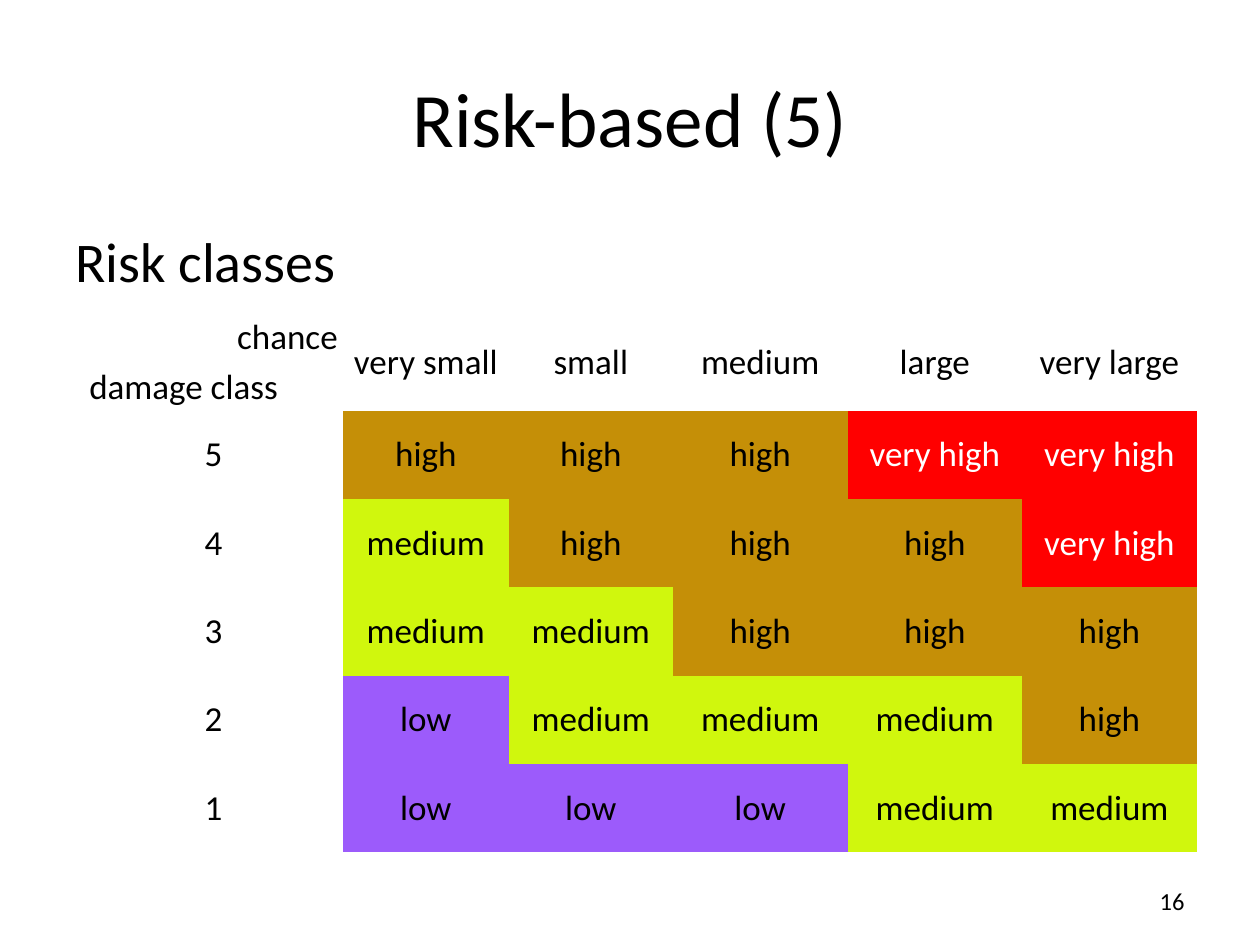
from pptx import Presentation
from pptx.dml.color import RGBColor
from pptx.enum.text import MSO_ANCHOR, PP_ALIGN
from pptx.util import Cm, Pt

LEFT, CENTER, RIGHT = PP_ALIGN.LEFT, PP_ALIGN.CENTER, PP_ALIGN.RIGHT
TOP, MIDDLE = MSO_ANCHOR.TOP, MSO_ANCHOR.MIDDLE
FONT = "Calibri"
BLACK, WHITE = "000000", "FFFFFF"
PLAIN_TABLE_STYLE = "{2D5ABB26-0587-4C30-8999-92F81FD0307C}"

# Content: text, place (left, top, width, height in cm), size, alignment, anchor
TEXTS = [
    ("Risk-based (5)", (1.27, 0.76, 22.86, 3.18), 44, CENTER, MIDDLE),
    ("Risk classes", (1.27, 4.45, 22.83, 1.68), 32, LEFT, TOP),
    ("16", (18.21, 17.65, 5.92, 1.02), 14, RIGHT, MIDDLE),
]
CORNER = [("chance", RIGHT), ("damage class", LEFT)]
CHANCES = ["very small", "small", "medium", "large", "very large"]
RISKS = {
    "5": ["high", "high", "high", "very high", "very high"],
    "4": ["medium", "high", "high", "high", "very high"],
    "3": ["medium", "medium", "high", "high", "high"],
    "2": ["low", "medium", "medium", "medium", "high"],
    "1": ["low", "low", "low", "medium", "medium"],
}
RISK_COLORS = {  # fill, text
    "low": ("9C5BFB", BLACK),
    "medium": ("D0F70D", BLACK),
    "high": ("C58F07", BLACK),
    "very high": ("FF0000", WHITE),
}
TABLE_LEFT, TABLE_TOP = 1.7, 6.32
COLUMN_WIDTHS = [5.21, 3.35, 3.3, 3.53, 3.51, 3.53]
HEADER_HEIGHT, ROW_HEIGHT = 1.96, 1.78


def rgb(color):
    return RGBColor.from_string(color)


def write(frame, lines, size, color=BLACK):
    """Fill a text frame with (text, alignment) lines."""
    for index, (text, alignment) in enumerate(lines):
        para = frame.add_paragraph() if index else frame.paragraphs[0]
        para.alignment = alignment
        para.space_before = Pt(0.2 * size if index else 0)
        span = para.add_run()
        span.text = text
        span.font.name = FONT
        span.font.size = Pt(size)
        span.font.color.rgb = rgb(color)


def fill_cell(cell, lines, fill=None, color=BLACK):
    cell.vertical_anchor = MIDDLE
    cell.margin_left = cell.margin_right = Cm(0.1)
    cell.margin_top = cell.margin_bottom = Cm(0.05)
    if fill:
        cell.fill.solid()
        cell.fill.fore_color.rgb = rgb(fill)
    else:
        cell.fill.background()
    write(cell.text_frame, lines, 20, color)


deck = Presentation()
deck.slide_width, deck.slide_height = Cm(25.4), Cm(19.05)
page = deck.slides.add_slide(deck.slide_layouts[6])

# Title, subtitle and page number
for text, place, size, alignment, anchor in TEXTS:
    box = page.shapes.add_textbox(*map(Cm, place))
    box.text_frame.word_wrap = True
    box.text_frame.vertical_anchor = anchor
    write(box.text_frame, [(text, alignment)], size)

# Risk matrix
row_heights = [HEADER_HEIGHT] + [ROW_HEIGHT] * len(RISKS)
holder = page.shapes.add_table(
    len(row_heights), len(COLUMN_WIDTHS), Cm(TABLE_LEFT), Cm(TABLE_TOP),
    Cm(sum(COLUMN_WIDTHS)), Cm(sum(row_heights)))
matrix = holder.table
matrix.first_row = matrix.horz_banding = False
for style in holder.element.iter("{*}tableStyleId"):
    style.text = PLAIN_TABLE_STYLE
for column, width in zip(matrix.columns, COLUMN_WIDTHS):
    column.width = Cm(width)
for row, height in zip(matrix.rows, row_heights):
    row.height = Cm(height)

# Header row, then one row per damage class
fill_cell(matrix.cell(0, 0), CORNER)
for column, chance in enumerate(CHANCES, 1):
    fill_cell(matrix.cell(0, column), [(chance, CENTER)])
for row, (damage, risks) in enumerate(RISKS.items(), 1):
    fill_cell(matrix.cell(row, 0), [(damage, CENTER)])
    for column, risk in enumerate(risks, 1):
        fill_cell(matrix.cell(row, column), [(risk, CENTER)], *RISK_COLORS[risk])

deck.save("out.pptx")
